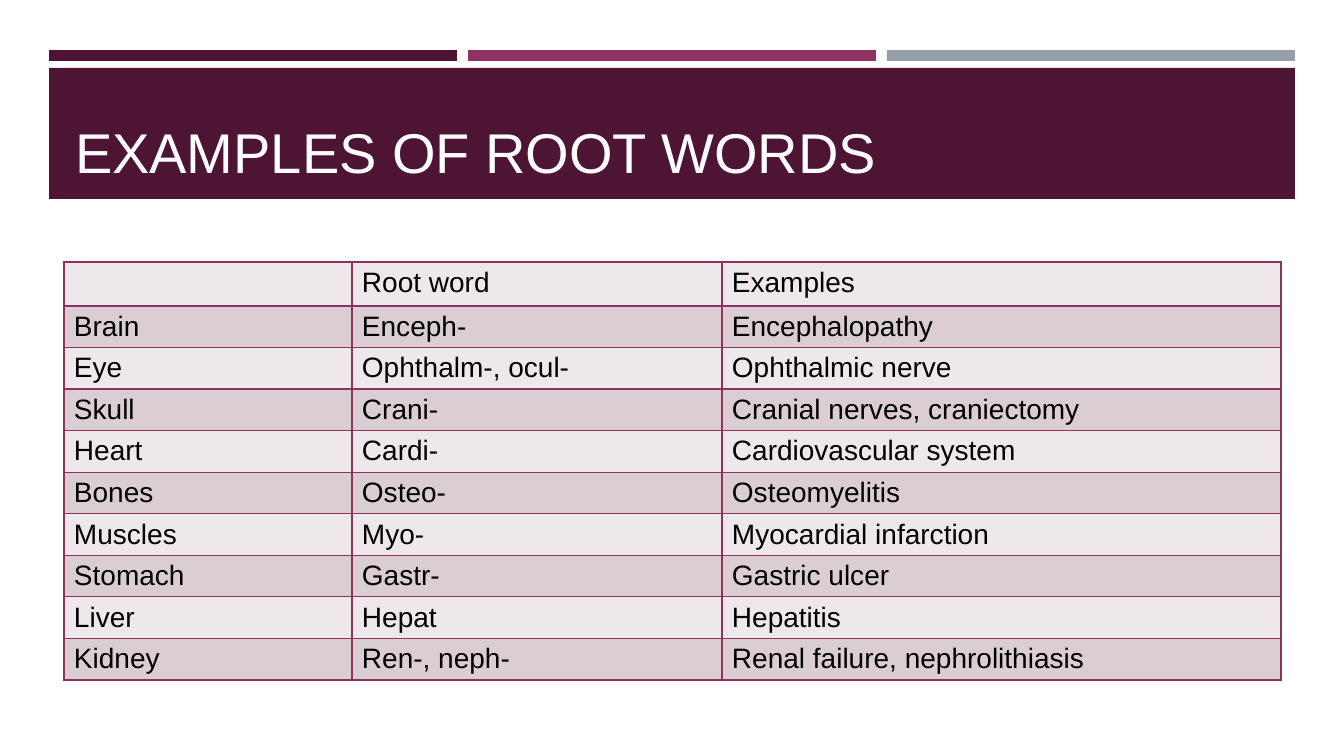
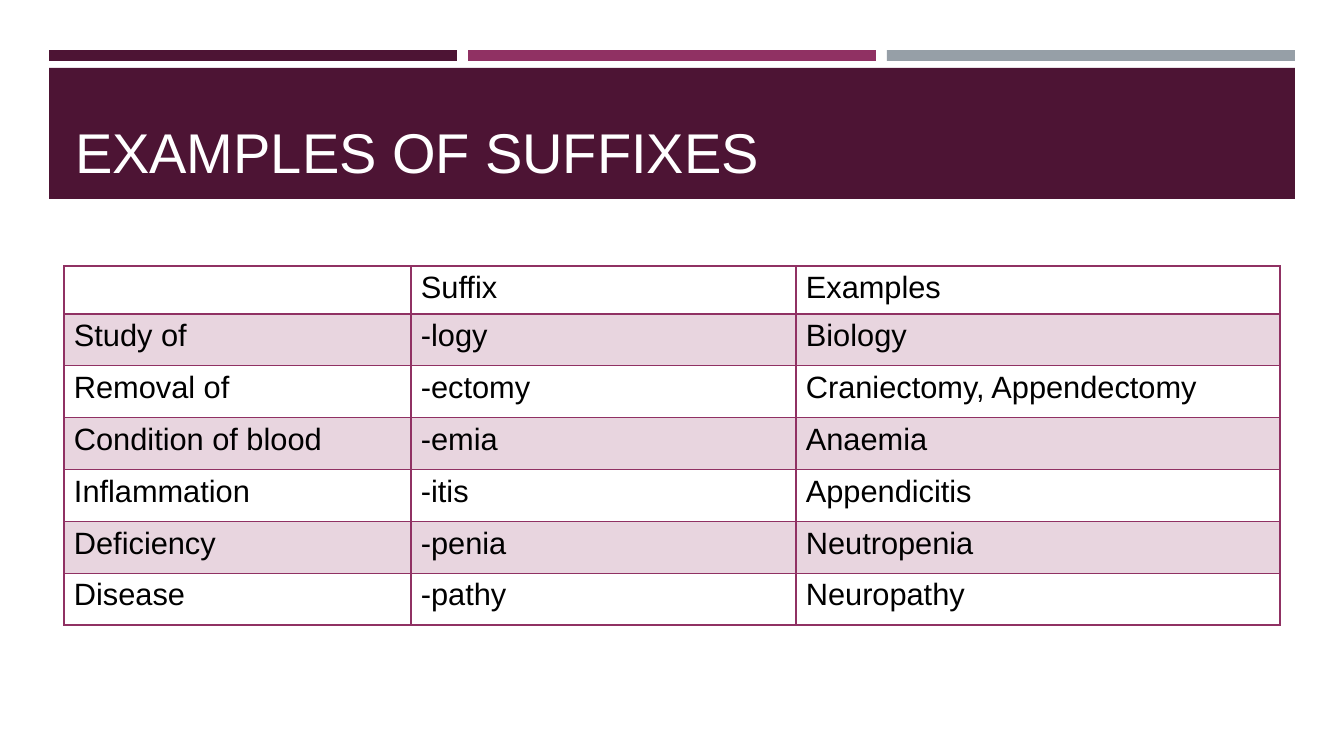
from lxml import etree
from pptx import Presentation
from pptx.dml.color import RGBColor
from pptx.enum.shapes import MSO_SHAPE
from pptx.enum.text import MSO_ANCHOR, MSO_AUTO_SIZE, PP_ALIGN
from pptx.oxml.ns import qn
from pptx.util import Pt

RECTANGLE = MSO_SHAPE.RECTANGLE
BOTTOM, TOP = MSO_ANCHOR.BOTTOM, MSO_ANCHOR.TOP
LEFT = PP_ALIGN.LEFT
NO_AUTOFIT = MSO_AUTO_SIZE.NONE

PLUM = RGBColor(0x4D, 0x14, 0x34)
MAGENTA = RGBColor(0x90, 0x31, 0x63)
GREY = RGBColor(0x96, 0x9F, 0xA7)
PALE = RGBColor(0xEE, 0xE8, 0xEA)
MAUVE = RGBColor(0xDB, 0xCE, 0xD3)
WHITE = RGBColor(0xFF, 0xFF, 0xFF)
BLACK = RGBColor(0x00, 0x00, 0x00)

FONT = "Arial"
TITLE_ONLY = 5

ROOT_WORDS = [
    ("", "Root word", "Examples"),
    ("Brain", "Enceph-", "Encephalopathy"),
    ("Eye", "Ophthalm-, ocul-", "Ophthalmic nerve"),
    ("Skull", "Crani-", "Cranial nerves, craniectomy"),
    ("Heart", "Cardi-", "Cardiovascular system"),
    ("Bones", "Osteo-", "Osteomyelitis"),
    ("Muscles", "Myo-", "Myocardial infarction"),
    ("Stomach", "Gastr-", "Gastric ulcer"),
    ("Liver", "Hepat", "Hepatitis"),
    ("Kidney", "Ren-, neph-", "Renal failure, nephrolithiasis"),
]
SUFFIXES = [
    ("", "Suffix", "Examples"),
    ("Study of", "-logy", "Biology"),
    ("Removal of", "-ectomy", "Craniectomy, Appendectomy"),
    ("Condition of blood", "-emia", "Anaemia"),
    ("Inflammation", "-itis", "Appendicitis"),
    ("Deficiency", "-penia", "Neutropenia"),
    ("Disease", "-pathy", "Neuropathy"),
]


def px(length):
    """Turn a length in px into EMU."""
    return round(length * 914400 / 100.8)


class Deck:
    """Hold the presentation, its style and the current slide."""

    def __init__(self):
        """Start an empty widescreen presentation."""
        self.presentation = Presentation()
        self.presentation.slide_width = px(1344)
        self.presentation.slide_height = px(756)
        self.slide = None

    def add_slide(self, title):
        """Add a slide with the stripes, the title band and the title."""
        layout = self.presentation.slide_layouts[TITLE_ONLY]
        self.slide = self.presentation.slides.add_slide(layout)
        for index, color in enumerate((PLUM, MAGENTA, GREY)):
            self.add_band(49 + 419 * index, 50, 408, 11, color)
        self.add_band(49, 68, 1246, 131, PLUM)
        self.set_title(title)

    def add_band(self, left, top, width, height, color):
        """Add a plain rectangle behind the title."""
        band = self.slide.shapes.add_shape(
            RECTANGLE, px(left), px(top), px(width), px(height))
        band.shadow.inherit = False
        band.fill.solid()
        band.fill.fore_color.rgb = color
        band.line.fill.background()
        self.slide.shapes.title.element.addprevious(band.element)

    def set_title(self, text):
        """Place and format the title placeholder."""
        title = self.slide.shapes.title
        title.left, title.top = px(65), px(78)
        title.width, title.height = px(1216), px(112)
        frame = title.text_frame
        frame.text = text
        frame.word_wrap = True
        frame.auto_size = NO_AUTOFIT
        frame.vertical_anchor = BOTTOM
        paragraph = frame.paragraphs[0]
        paragraph.alignment = LEFT
        self.set_font(paragraph, 40, WHITE)

    def set_font(self, paragraph, size, color):
        """Give a paragraph the deck font."""
        paragraph.font.name = FONT
        paragraph.font.size = Pt(size)
        paragraph.font.color.rgb = color

    def add_table(self, rows, top, widths, header_height, body_height, size,
                  fills, rule=1, alpha=100):
        """Add a table whose rows alternate between two fills."""
        height = px(header_height + body_height)
        table = self.slide.shapes.add_table(
            len(rows), len(widths), px(64), px(top), px(sum(widths)), height).table
        table.first_row = False
        table.horz_banding = False
        for column, width in zip(table.columns, widths):
            column.width = px(width)
        for index, texts in enumerate(rows):
            table.rows[index].height = (
                px(body_height / (len(rows) - 1)) if index else px(header_height))
            borders = {"L": 1, "R": 1,
                       "T": rule if index == 1 else 1,
                       "B": rule if index == 0 else 1}
            for column, text in enumerate(texts):
                cell = table.cell(index, column)
                self.set_cell(cell, text, size)
                self.set_borders(cell, borders)
                self.set_fill(cell, fills[index % 2], alpha)

    def set_cell(self, cell, text, size):
        """Write and format the text of a cell."""
        cell.text = text
        cell.vertical_anchor = TOP
        cell.margin_left = cell.margin_right = px(10)
        cell.margin_top, cell.margin_bottom = px(5), px(4)
        self.set_font(cell.text_frame.paragraphs[0], size, BLACK)

    def set_borders(self, cell, borders):
        """Draw the four borders of a cell with widths in points."""
        properties = cell._tc.get_or_add_tcPr()
        for side, width in borders.items():
            line = etree.SubElement(properties, qn(f"a:ln{side}"), w=str(Pt(width)))
            fill = etree.SubElement(line, qn("a:solidFill"))
            etree.SubElement(fill, qn("a:srgbClr"), val=str(MAGENTA))

    def set_fill(self, cell, color, alpha):
        """Fill a cell with a colour at an opacity in percent, or leave it clear."""
        if color is None:
            cell.fill.background()
            return
        cell.fill.solid()
        cell.fill.fore_color.rgb = color
        if alpha < 100:
            tint = cell._tc.tcPr.find(f"{qn('a:solidFill')}/{qn('a:srgbClr')}")
            etree.SubElement(tint, qn("a:alpha"), val=str(alpha * 1000))


def main():
    """Build both slides and save them."""
    deck = Deck()
    deck.add_slide("EXAMPLES OF ROOT WORDS")
    deck.add_table(ROOT_WORDS, 262, (288, 370, 559), 44, 374, 20, (PALE, MAUVE))
    deck.add_slide("EXAMPLES OF SUFFIXES")
    deck.add_table(SUFFIXES, 266, (347, 385, 484), 48, 311, 22, (None, MAGENTA),
                   rule=2, alpha=20)
    deck.presentation.save("out.pptx")


if __name__ == "__main__":
    main()
